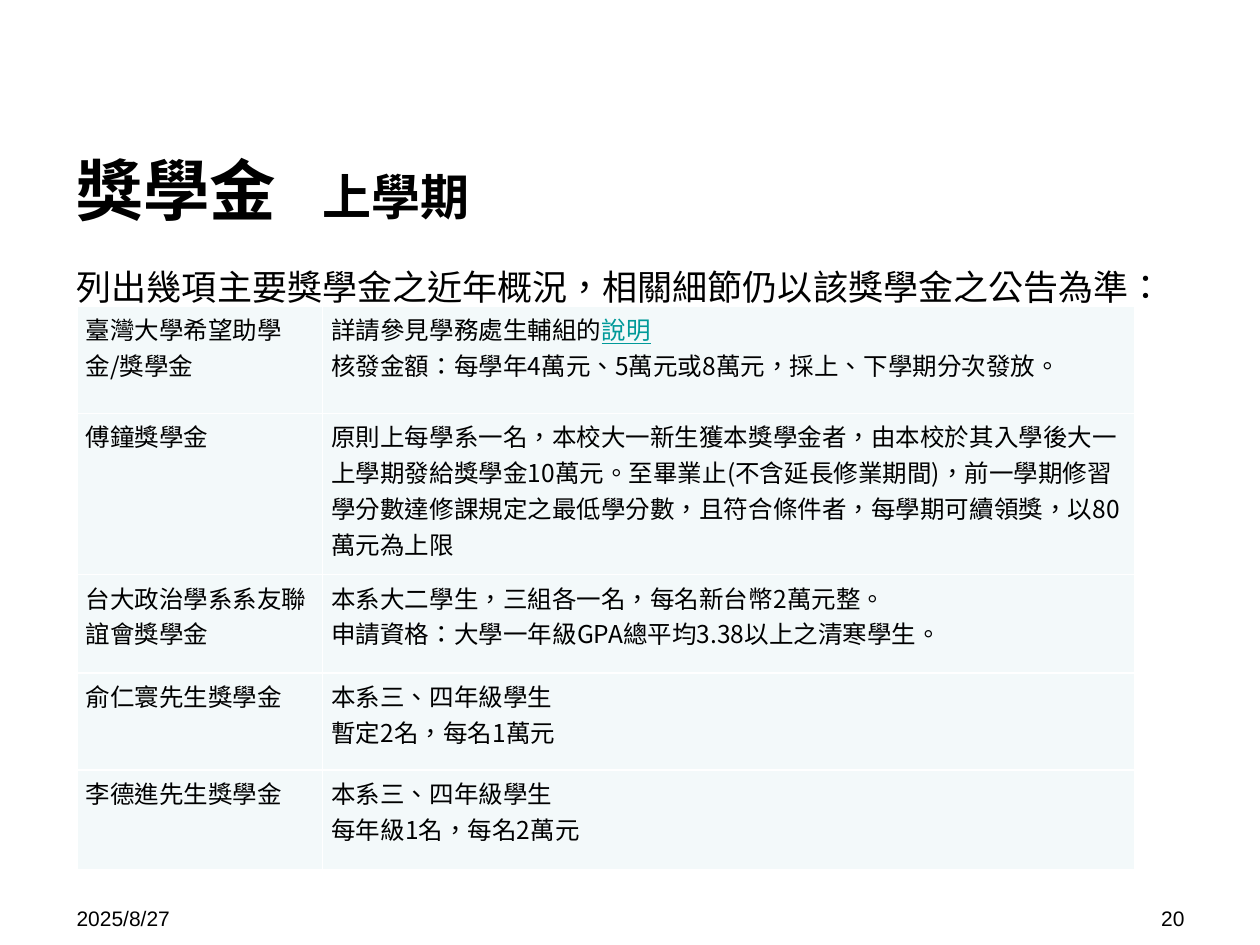
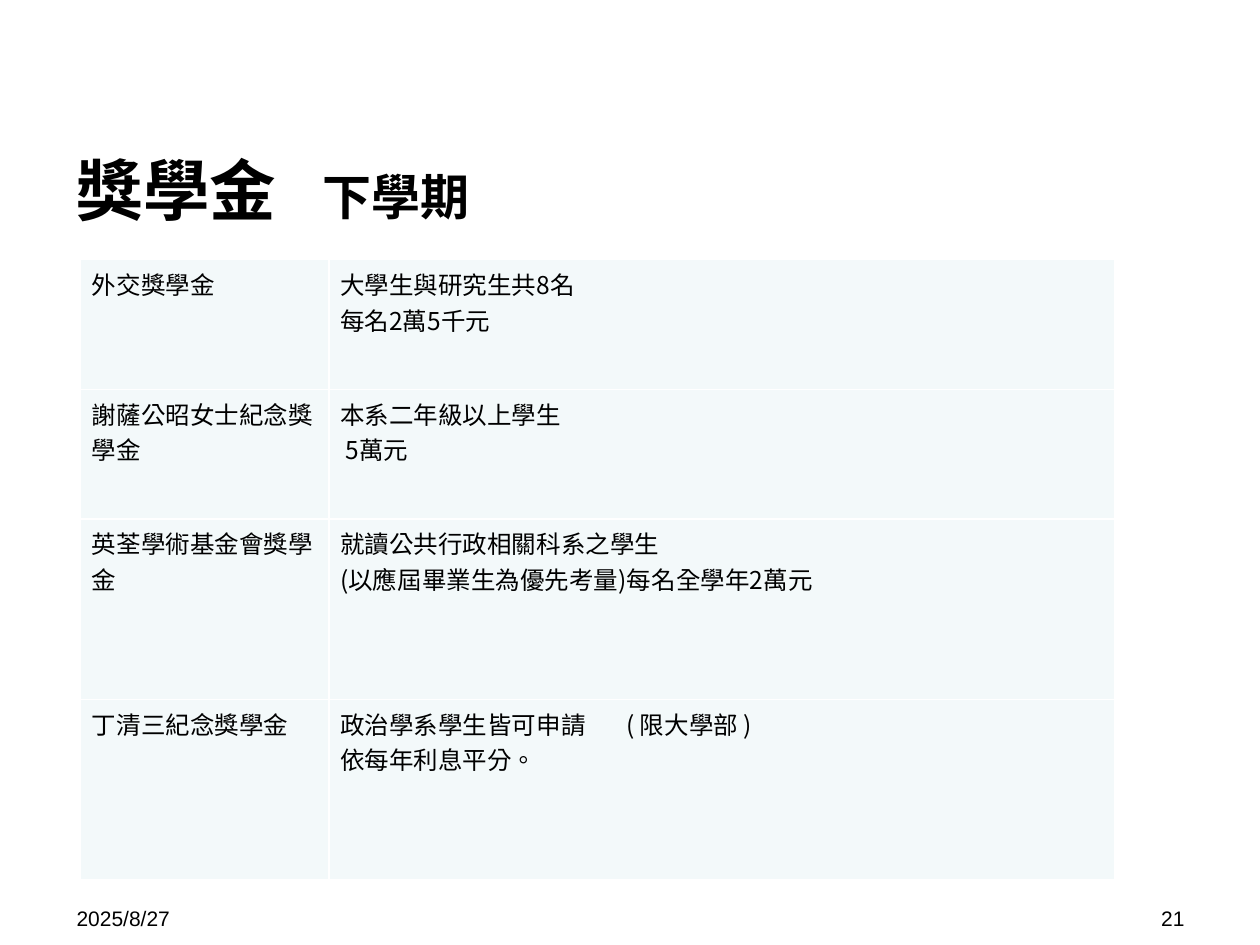
from lxml import etree
from pptx import Presentation
from pptx.dml.color import RGBColor
from pptx.enum.lang import MSO_LANGUAGE_ID as Language
from pptx.enum.text import MSO_ANCHOR as Anchor, PP_ALIGN as Align
from pptx.oxml.ns import qn
from pptx.util import Inches, Pt

# Shared style
BLACK = RGBColor(0x00, 0x00, 0x00)
WHITE = RGBColor(0xFF, 0xFF, 0xFF)
TEAL = RGBColor(0x00, 0x99, 0x99)
CELL_FILL = RGBColor(0xF3, 0xF9, 0xFA)
CJK_FONT = "Noto Sans CJK SC"
LATIN_FONT = "Arial"
DATE = "2025/8/27"
LEFT = 0.51
TITLE_AND_CONTENT, TITLE_ONLY = 1, 5

INTRO = "列出幾項主要獎學金之近年概況，相關細節仍以該獎學金之公告為準："
LINK_LABEL = "說明"

# Each row: scholarship name, then the paragraphs of its description
AUTUMN_ROWS = [
    ("臺灣大學希望助學金/獎學金",
     ["詳請參見學務處生輔組的" + LINK_LABEL,
      "核發金額：每學年4萬元、5萬元或8萬元，採上、下學期分次發放。"]),
    ("傅鐘獎學金",
     ["原則上每學系一名，本校大一新生獲本獎學金者，由本校於其入學後大一上學期發給"
      "獎學金10萬元。至畢業止(不含延長修業期間)，前一學期修習學分數達修課規定之"
      "最低學分數，且符合條件者，每學期可續領獎，以80萬元為上限"]),
    ("台大政治學系系友聯誼會獎學金",
     ["本系大二學生，三組各一名，每名新台幣2萬元整。\v"
      "申請資格：大學一年級GPA總平均3.38以上之清寒學生。"]),
    ("俞仁寰先生獎學金", ["本系三、四年級學生", "暫定2名，每名1萬元"]),
    ("李德進先生獎學金", ["本系三、四年級學生", "每年級1名，每名2萬元"]),
]
SPRING_ROWS = [
    ("外交獎學金", ["大學生與研究生共8名", "每名2萬5千元"]),
    ("謝薩公昭女士紀念獎學金", ["本系二年級以上學生", " 5萬元"]),
    ("英荃學術基金會獎學金",
     ["就讀公共行政相關科系之學生", "(以應屆畢業生為優先考量)每名全學年2萬元"]),
    ("丁清三紀念獎學金", ["政治學系學生皆可申請\t( 限大學部 )", "依每年利息平分。"]),
]


def place(shape, left, top, width, height):
    shape.left, shape.top = Inches(left), Inches(top)
    shape.width, shape.height = Inches(width), Inches(height)


def add_tab(para, position):
    tabs = etree.SubElement(para._p.get_or_add_pPr(), qn("a:tabLst"))
    etree.SubElement(tabs, qn("a:tab"), pos=str(Inches(position)), algn="l")


def style(para, size, name=CJK_FONT, bold=False):
    font = para.font
    font.size, font.bold, font.name = Pt(size), bold, name
    font.color.rgb = BLACK
    if name == CJK_FONT:
        defaults = para._p.pPr.find(qn("a:defRPr"))
        etree.SubElement(defaults, qn("a:ea"), typeface=name)
        font.language_id = Language.TRADITIONAL_CHINESE
        for span in para.runs:
            span.font.language_id = Language.TRADITIONAL_CHINESE


def add_title(page, term):
    title = page.shapes.title
    place(title, LEFT, 1.15, 9, 0.7)
    title.text_frame.vertical_anchor = Anchor.MIDDLE
    para = title.text_frame.paragraphs[0]
    para.alignment = Align.LEFT
    add_tab(para, 1.95)
    for text, size in (("獎學金\t", 38), (term, 28)):
        span = para.add_run()
        span.text = text
        span.font.size = Pt(size)
    style(para, 38, bold=True)


def add_intro(page, text):
    body = page.placeholders[1]
    place(body, LEFT, 2.06, 8.9, 4.92)
    para = body.text_frame.paragraphs[0]
    para.text = text
    para.space_before = Pt(0)
    properties = para._p.get_or_add_pPr()
    properties.set("marL", "0")
    properties.set("indent", "0")
    etree.SubElement(properties, qn("a:buNone"))
    style(para, 20)


def add_footer(page, number):
    for text, left, align in ((DATE, LEFT, Align.LEFT), (str(number), 7.17, Align.RIGHT)):
        box = page.shapes.add_textbox(Inches(left), Inches(7.14), Inches(2.33), Inches(0.21))
        box.text_frame.word_wrap = True
        para = box.text_frame.paragraphs[0]
        para.text = text
        para.alignment = align
        style(para, 12, LATIN_FONT)


def add_borders(cell):
    properties = cell._tc.get_or_add_tcPr()
    for side in ("lnL", "lnR", "lnT", "lnB"):
        line = etree.SubElement(properties, qn(f"a:{side}"), w=str(Pt(1)))
        fill = etree.SubElement(line, qn("a:solidFill"))
        etree.SubElement(fill, qn("a:srgbClr"), val=str(WHITE))


def fill_cell(cell, lines, inset_x, inset_y):
    cell.margin_left = cell.margin_right = Inches(inset_x)
    cell.margin_top = cell.margin_bottom = Inches(inset_y)
    add_borders(cell)
    cell.fill.solid()
    cell.fill.fore_color.rgb = CELL_FILL
    frame = cell.text_frame
    for index, text in enumerate(lines):
        para = frame.add_paragraph() if index else frame.paragraphs[0]
        if "\t" in text:
            add_tab(para, 2.27)
        linked = text.endswith(LINK_LABEL)
        para.text = text.removesuffix(LINK_LABEL)
        if linked:
            span = para.add_run()
            span.text = LINK_LABEL
            span.font.underline = True
            span.font.color.rgb = TEAL
        style(para, 14)


def add_scholarships(page, rows, left, top, widths, heights, insets):
    frame = page.shapes.add_table(len(rows), len(widths), Inches(left), Inches(top),
                                  Inches(sum(widths)), Inches(sum(heights)))
    table = frame.table
    table.first_row = table.horz_banding = False
    for column, width in zip(table.columns, widths):
        column.width = Inches(width)
    for row, height, (name, details) in zip(table.rows, heights, rows):
        row.height = Inches(height)
        fill_cell(row.cells[0], [name], *insets)
        fill_cell(row.cells[1], details, *insets)


def add_page(deck, layout, term, number):
    page = deck.slides.add_slide(deck.slide_layouts[layout])
    add_title(page, term)
    add_footer(page, number)
    return page


def main():
    deck = Presentation()
    deck.slide_width, deck.slide_height = Inches(10), Inches(7.5)

    # First semester
    page = add_page(deck, TITLE_AND_CONTENT, "上學期", 20)
    add_intro(page, INTRO)
    add_scholarships(page, AUTUMN_ROWS, 0.61, 2.43, [1.95, 6.45],
                     [0.85, 1.28, 0.78, 0.77, 0.79], (0.07, 0.04))

    # Second semester
    page = add_page(deck, TITLE_ONLY, "下學期", 21)
    add_scholarships(page, SPRING_ROWS, 0.64, 2.06, [1.97, 6.24],
                     [1.03, 1.03, 1.43, 1.43], (0.09, 0.05))

    deck.save("out.pptx")


if __name__ == "__main__":
    main()
